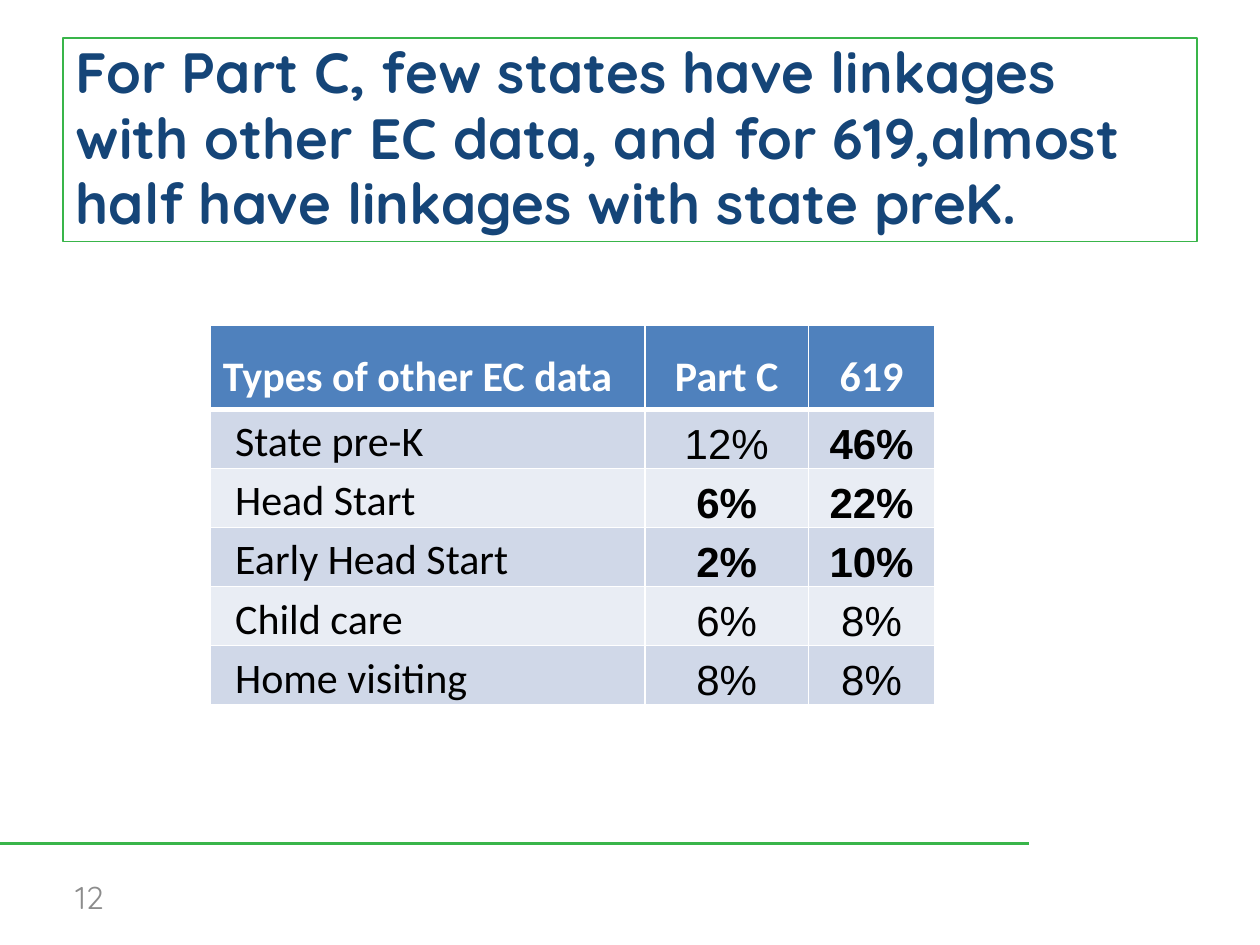
import dataclasses

import lxml.etree
import pptx
import pptx.dml.color
import pptx.enum.shapes
import pptx.enum.text
import pptx.oxml.ns
import pptx.util

Cm = pptx.util.Cm
Pt = pptx.util.Pt
Align = pptx.enum.text.PP_ALIGN
Anchor = pptx.enum.text.MSO_ANCHOR


@dataclasses.dataclass(frozen=True)
class Theme:
    green: str = "39B54A"
    navy: str = "154578"
    grey: str = "8C8C8C"
    white: str = "FFFFFF"
    black: str = "000000"
    header_fill: str = "4F81BD"
    band_fills: tuple[str, str] = ("D0D8E8", "E9EDF4")
    title_font: str = "Quicksand"
    label_font: str = "Calibri"
    value_font: str = "Arial"
    title_size: float = 32.4
    table_size: float = 24
    number_size: float = 18


@dataclasses.dataclass(frozen=True)
class Linkage:
    label: str
    part_c: str
    section_619: str
    bold_part_c: bool = False
    bold_619: bool = False


THEME = Theme()
HEADERS = ("Types of other EC data", "Part C", "619")
LINKAGES = (
    Linkage("State pre-K", "12%", "46%", bold_619=True),
    Linkage("Head Start", "6%", "22%", True, True),
    Linkage("Early Head Start", "2%", "10%", True, True),
    Linkage("Child care", "6%", "8%"),
    Linkage("Home visiting", "8%", "8%"),
)
COLUMN_WIDTHS = (8.76, 3.3, 2.54)
HEADER_HEIGHT, ROW_HEIGHT = 1.7, 1.19


def rgb(color: str) -> pptx.dml.color.RGBColor:
    return pptx.dml.color.RGBColor.from_string(color)


def add_run(paragraph, text: str, font: str, size: float, color: str, bold: bool = False) -> None:
    run = paragraph.add_run()
    run.text = text
    run.font.name = font
    run.font.size = Pt(size)
    run.font.bold = bold
    run.font.color.rgb = rgb(color)


def set_borders(cell, bottom_width: float) -> None:
    properties = cell._tc.get_or_add_tcPr()
    widths = {"a:lnL": 1, "a:lnR": 1, "a:lnT": 1, "a:lnB": bottom_width}
    for tag, width in widths.items():
        line = lxml.etree.SubElement(properties, pptx.oxml.ns.qn(tag), w=str(Pt(width)))
        fill = lxml.etree.SubElement(line, pptx.oxml.ns.qn("a:solidFill"))
        lxml.etree.SubElement(fill, pptx.oxml.ns.qn("a:srgbClr"), val=THEME.white)


def style_cell(cell, fill: str, bottom_width: float = 1):
    """Colour and border a cell, and return its paragraph."""
    set_borders(cell, bottom_width)
    cell.fill.solid()
    cell.fill.fore_color.rgb = rgb(fill)
    cell.vertical_anchor = Anchor.BOTTOM
    return cell.text_frame.paragraphs[0]


def add_title(slide, text: str) -> None:
    title = slide.shapes.title
    title.left, title.top, title.width, title.height = Cm(1.27), Cm(0.76), Cm(22.86), Cm(4.11)
    title.line.color.rgb = rgb(THEME.green)
    title.line.width = Pt(1)
    frame = title.text_frame
    frame.auto_size = pptx.enum.text.MSO_AUTO_SIZE.NONE
    frame.word_wrap = True
    frame.vertical_anchor = Anchor.MIDDLE
    paragraph = frame.paragraphs[0]
    paragraph.alignment = Align.LEFT
    paragraph.line_spacing = 0.96
    add_run(paragraph, text, THEME.title_font, THEME.title_size, THEME.navy, bold=True)


def add_linkage_table(slide) -> None:
    height = HEADER_HEIGHT + ROW_HEIGHT * len(LINKAGES)
    table = slide.shapes.add_table(
        len(LINKAGES) + 1, len(HEADERS), Cm(4.24), Cm(6.55), Cm(sum(COLUMN_WIDTHS)), Cm(height)
    ).table
    for column, width in zip(table.columns, COLUMN_WIDTHS):
        column.width = Cm(width)
    for index, row in enumerate(table.rows):
        row.height = Cm(ROW_HEIGHT if index else HEADER_HEIGHT)

    # Header row
    for column, text in enumerate(HEADERS):
        paragraph = style_cell(table.cell(0, column), THEME.header_fill, bottom_width=3)
        paragraph.alignment = Align.CENTER if column else Align.LEFT
        add_run(paragraph, text, THEME.label_font, THEME.table_size, THEME.white, bold=True)

    # Banded data rows
    for index, linkage in enumerate(LINKAGES):
        entries = (
            (linkage.label, False),
            (linkage.part_c, linkage.bold_part_c),
            (linkage.section_619, linkage.bold_619),
        )
        for column, (text, bold) in enumerate(entries):
            cell = table.cell(index + 1, column)
            paragraph = style_cell(cell, THEME.band_fills[index % 2])
            cell.margin_left = cell.margin_right = Cm(0.2)
            cell.margin_top = cell.margin_bottom = 0
            paragraph.space_after = Pt(1)
            if column:
                paragraph.alignment = Align.CENTER
            else:
                paragraph._p.get_or_add_pPr().set("marL", str(Cm(0.3)))
            font = THEME.value_font if column else THEME.label_font
            add_run(paragraph, text, font, THEME.table_size, THEME.black, bold)


def add_footer(slide, number: str) -> None:
    rule = slide.shapes.add_connector(
        pptx.enum.shapes.MSO_CONNECTOR.STRAIGHT, 0, Cm(17), Cm(20.75), Cm(17)
    )
    rule.line.color.rgb = rgb(THEME.green)
    rule.line.width = Pt(1.5)
    lxml.etree.SubElement(rule._element.spPr, pptx.oxml.ns.qn("a:effectLst"))

    frame = slide.shapes.add_textbox(Cm(1.27), Cm(17.58), Cm(5.92), Cm(1.02)).text_frame
    frame.word_wrap = True
    frame.vertical_anchor = Anchor.MIDDLE
    add_run(frame.paragraphs[0], number, THEME.title_font, THEME.number_size, THEME.grey)


def main() -> None:
    presentation = pptx.Presentation()
    presentation.slide_width, presentation.slide_height = Cm(25.4), Cm(19.05)
    slide = presentation.slides.add_slide(presentation.slide_layouts.get_by_name("Title Only"))
    add_footer(slide, "12")
    add_title(
        slide,
        "For Part C, few states have linkages with other EC data, "
        "and for 619,almost half have linkages with state preK.",
    )
    add_linkage_table(slide)
    presentation.save("out.pptx")


if __name__ == "__main__":
    main()
